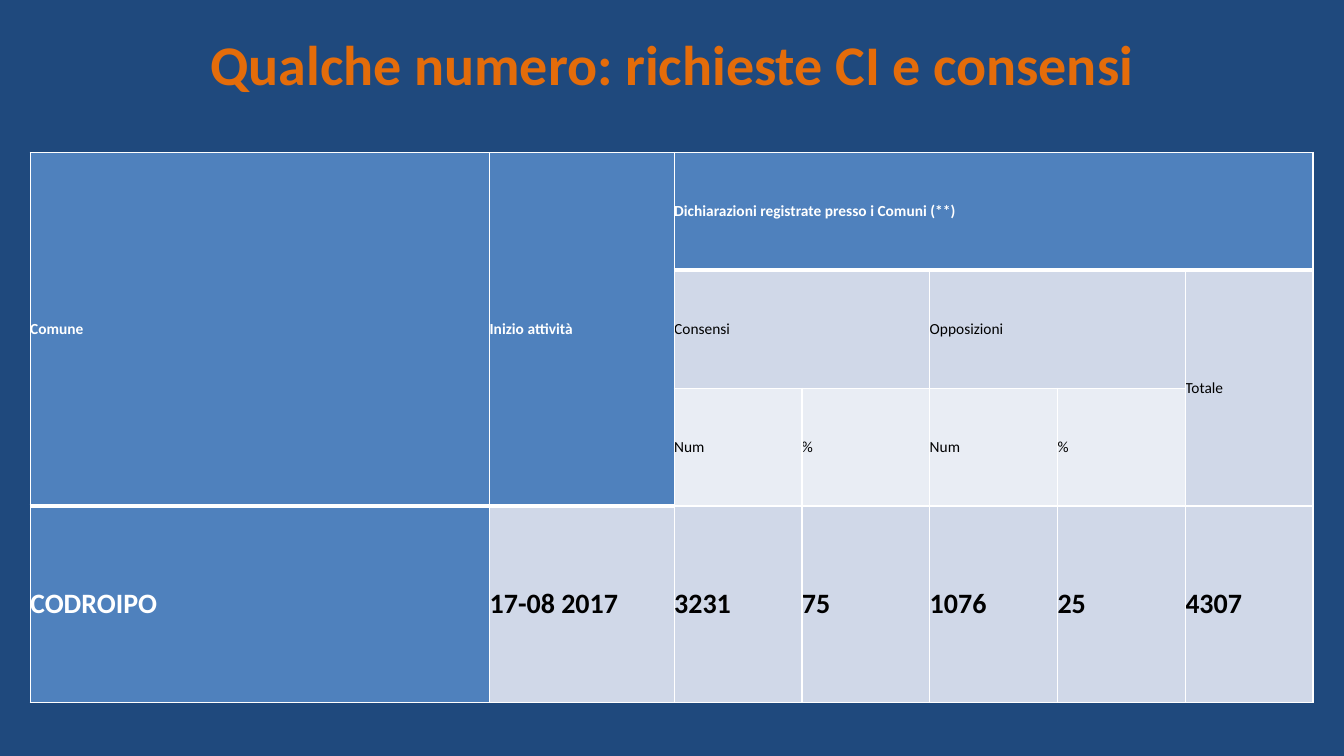
from lxml.etree import SubElement as Sub
from pptx import Presentation
from pptx.dml.color import RGBColor as Rgb
from pptx.enum.text import MSO_ANCHOR as Anchor, PP_ALIGN as Align
from pptx.oxml.ns import qn
from pptx.util import Cm, Pt

# Content: row, column, rows spanned, columns spanned, text, style
TITLE = "Qualche numero: richieste CI e consensi"
CELLS = [
    (0, 0, 3, 1, "Comune", "head"),
    (0, 1, 3, 1, "Inizio attività", "head"),
    (0, 2, 1, 5, "Dichiarazioni registrate presso i Comuni (**)", "head"),
    (1, 2, 1, 2, "Consensi", "group"),
    (1, 4, 1, 2, "Opposizioni", "group"),
    (1, 6, 2, 1, "Totale", "group"),
    (2, 2, 1, 1, "Num", "unit"),
    (2, 3, 1, 1, "%", "unit"),
    (2, 4, 1, 1, "Num", "unit"),
    (2, 5, 1, 1, "%", "unit"),
    (3, 0, 1, 1, "CODROIPO", "town"),
]
VALUES = ["17-08 2017", "3231", "75", "1076", "25", "4307"]
CELLS += [(3, i, 1, 1, text, "value") for i, text in enumerate(VALUES, 1)]

# Theme: cell styles hold fill, text colour, size, bold
THEME = {
    "font": "Calibri", "back": "1F497D", "line": "FFFFFF",
    "thin": 1, "thick": 3,
    "title": ("E46C0A", 40, True),
    "head": ("4F81BD", "FFFFFF", 11, True),
    "group": ("D0D8E8", "000000", 11, False),
    "unit": ("E9EDF4", "000000", 11, False),
    "town": ("4F81BD", "FFFFFF", 20, True),
    "value": ("D0D8E8", "000000", 20, True),
}

# Measures in centimetres
SLIDE = (33.87, 19.05)
TITLE_BOX = (2.33, 0.64, 29.21, 2.13)
LEFT, TOP = 0.76, 3.84
COLS = [11.58, 4.65] + [3.22] * 5
ROWS = [2.97] * 3 + [4.96]


def style(par, color, size, bold):
    for run in par.runs:
        font = run.font
        font.name, font.size, font.bold = THEME["font"], Pt(size), bold
        font.color.rgb = Rgb.from_string(color)


def border(cell, top, bottom):
    props = cell._tc.get_or_add_tcPr()
    thin = THEME["thin"]
    for side, width in zip("LRTB", (thin, thin, top, bottom)):
        line = Sub(props, qn("a:ln" + side), w=str(Pt(width)))
        fill = Sub(line, qn("a:solidFill"))
        Sub(fill, qn("a:srgbClr"), val=THEME["line"])


deck = Presentation()
deck.slide_width, deck.slide_height = map(Cm, SLIDE)
slide = deck.slides.add_slide(deck.slide_layouts[6])
back = slide.background.fill
back.solid()
back.fore_color.rgb = Rgb.from_string(THEME["back"])

# Title
frame = slide.shapes.add_textbox(*map(Cm, TITLE_BOX)).text_frame
frame.word_wrap = True
frame.vertical_anchor = Anchor.MIDDLE
frame.text = TITLE
par = frame.paragraphs[0]
par.alignment, par.line_spacing = Align.CENTER, 0.9
style(par, *THEME["title"])

# Table grid
table = slide.shapes.add_table(
    len(ROWS), len(COLS), Cm(LEFT), Cm(TOP), Cm(sum(COLS)), Cm(sum(ROWS))
).table
for col, width in zip(table.columns, COLS):
    col.width = Cm(width)
for row, height in zip(table.rows, ROWS):
    row.height = Cm(height)

# Thick rules run under the header cells
rules = {(r + down, c + i) for r, c, down, wide, _, kind in CELLS
         if kind == "head" for i in range(wide)}

# Cells
for r, c, down, wide, text, kind in CELLS:
    fill, color, size, bold = THEME[kind]
    top, bottom = (THEME["thick" if (edge, c) in rules else "thin"]
                   for edge in (r, r + down))
    for y in range(r, r + down):
        for x in range(c, c + wide):
            cell = table.cell(y, x)
            border(cell, top, bottom)
            cell.fill.solid()
            cell.fill.fore_color.rgb = Rgb.from_string(fill)
    cell = table.cell(r, c)
    if down * wide > 1:
        cell.merge(table.cell(r + down - 1, c + wide - 1))
    cell.margin_left = cell.margin_right = 0
    cell.margin_top = cell.margin_bottom = 0
    cell.vertical_anchor = Anchor.MIDDLE
    cell.text_frame.text = text
    style(cell.text_frame.paragraphs[0], color, size, bold)

deck.save("out.pptx")
